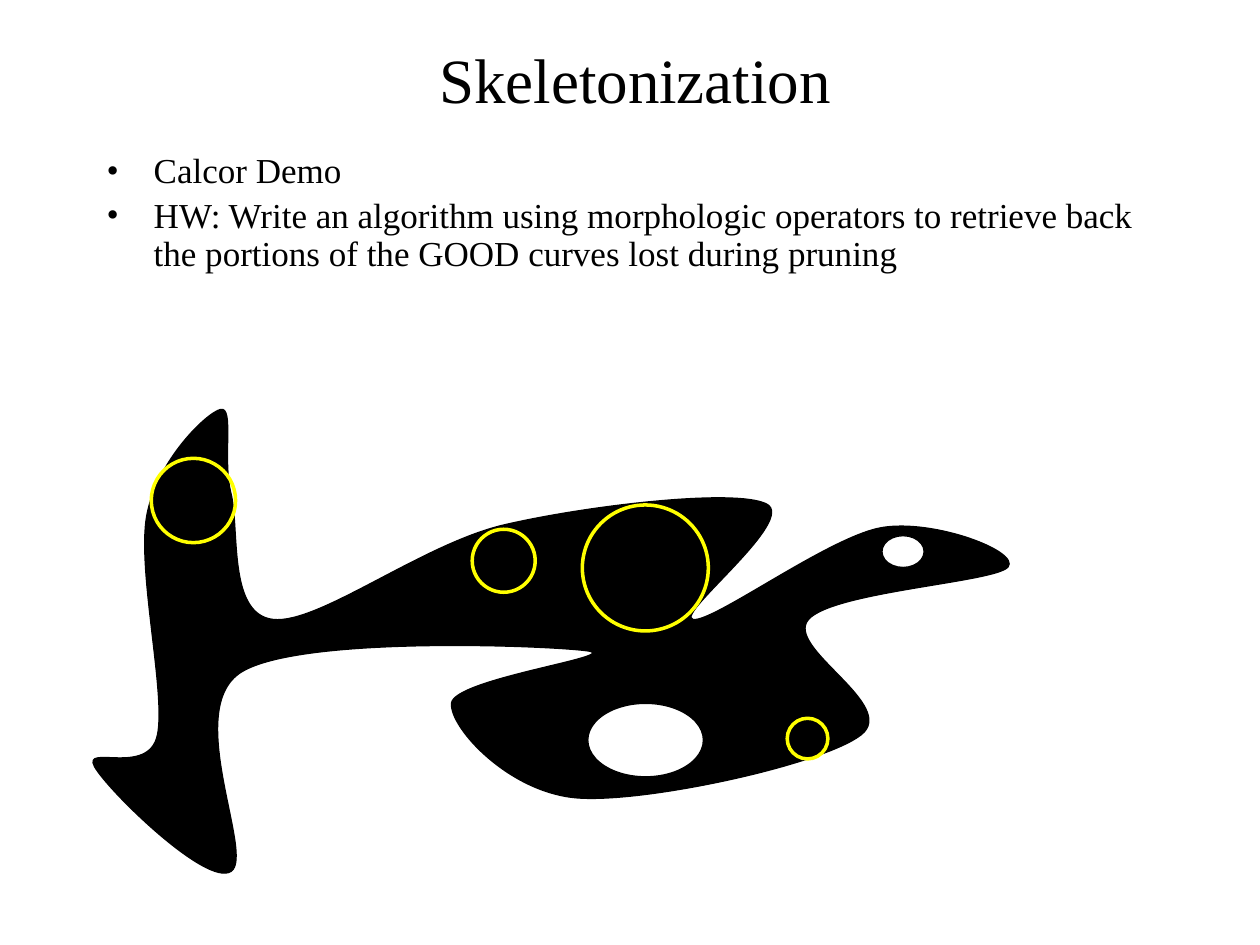
from lxml import etree
from pptx import Presentation
from pptx.dml.color import RGBColor
from pptx.enum.shapes import MSO_SHAPE as Shape
from pptx.enum.text import MSO_ANCHOR as Anchor, MSO_AUTO_SIZE as AutoSize, PP_ALIGN as Align
from pptx.oxml.ns import qn
from pptx.util import Cm, Pt

COLORS = {"ink": "000000", "paper": "FFFFFF", "disk": "FFFF00"}
GRID = 2.54 / 12
BIRD = [(22, 47), (26, 59), (48, 50), (73, 48), (66, 59), (84, 50.25),
        (96, 54), (77, 59), (82, 70), (55, 76), (43, 67), (56, 62),
        (23, 64), (22, 83), (9, 73), (15, 70), (14, 49), (21, 39)]
HOLES = [(11.85, 14.18, 2.33, 1.48), (17.78, 10.8, 0.85, 0.64)]
DISKS = [(9.52, 10.67, 1.27), (11.74, 10.18, 2.54), (3.05, 9.24, 1.7), (15.87, 14.48, 0.82)]
BULLETS = ["Calcor Demo",
           "HW: Write an algorithm using morphologic operators to retrieve back "
           "the portions of the GOOD curves lost during pruning"]


def rgb(name):
    return RGBColor.from_string(COLORS[name])


def add_text(p, text, size=20, color="ink", font="Times New Roman", align=Align.LEFT):
    p.alignment = align
    r = p.add_run()
    r.text = text
    r.font.size = Pt(size)
    r.font.name = font
    r.font.color.rgb = rgb(color)


def spline_points(knots):
    n = len(knots)
    points = []
    for i in range(n):
        a, b, c, d = (knots[(i + k) % n] for k in (-1, 0, 1, 2))
        points.append(tuple(q + (r - p) / 6 for p, q, r in zip(a, b, c)))
        points.append(tuple(r - (s - q) / 6 for q, r, s in zip(b, c, d)))
        points.append(c)
    return points


class SlideBuilder:
    def __init__(self, prs):
        self.slide = prs.slides.add_slide(prs.slide_layouts[5])
        self.shapes = self.slide.shapes

    def style(self, sp, fill, line, width):
        sp.shadow.inherit = False
        if fill:
            sp.fill.solid()
            sp.fill.fore_color.rgb = rgb(fill)
        else:
            sp.fill.background()
        sp.line.color.rgb = rgb(line)
        sp.line.width = Pt(width)

    def title(self, text, x, y, w, h):
        sp = self.shapes.title
        sp.left, sp.top, sp.width, sp.height = Cm(x), Cm(y), Cm(w), Cm(h)
        tf = sp.text_frame
        tf.auto_size = AutoSize.NONE
        tf.vertical_anchor = Anchor.MIDDLE
        add_text(tf.paragraphs[0], text, size=36, align=Align.CENTER)

    def bullets(self, items, x, y, w, h):
        tf = self.shapes.add_textbox(Cm(x), Cm(y), Cm(w), Cm(h)).text_frame
        tf.word_wrap = True
        for i, item in enumerate(items):
            p = tf.add_paragraph() if i else tf.paragraphs[0]
            add_text(p, item)
            p.line_spacing = 0.9
            p.space_before = Pt(4)
            pPr = p._p.get_or_add_pPr()
            pPr.set("marL", str(Cm(0.95)))
            pPr.set("indent", str(-Cm(0.95)))
            etree.SubElement(pPr, qn("a:buFont")).set("typeface", "Times New Roman")
            etree.SubElement(pPr, qn("a:buChar")).set("char", "•")

    def ellipse(self, x, y, w, h, fill=None, line="ink", width=0.75):
        sp = self.shapes.add_shape(Shape.OVAL, Cm(x), Cm(y), Cm(w), Cm(h))
        self.style(sp, fill, line, width)

    def closed_curve(self, knots, fill="ink", line="ink", width=0.75):
        knots = [(Cm(x * GRID), Cm(y * GRID)) for x, y in knots]
        builder = self.shapes.build_freeform(*knots[0], scale=1.0)
        builder.add_line_segments(spline_points(knots), close=True)
        sp = builder.convert_to_shape()
        lines = list(sp._element.iter(qn("a:lnTo")))
        for i in range(0, len(lines), 3):
            curve = etree.Element(qn("a:cubicBezTo"))
            lines[i].addprevious(curve)
            for line_to in lines[i:i + 3]:
                curve.append(line_to[0])
                line_to.getparent().remove(line_to)
        self.style(sp, fill, line, width)


def main():
    prs = Presentation()
    prs.slide_width, prs.slide_height = Cm(25.4), Cm(19.05)
    s = SlideBuilder(prs)
    s.title("Skeletonization", 1.63, 0.48, 22.35, 2.18)
    s.bullets(BULLETS, 1.9, 2.97, 21.39, 14.63)
    s.closed_curve(BIRD)
    for hole in HOLES:
        s.ellipse(*hole, fill="paper")
    for x, y, d in DISKS:
        s.ellipse(x, y, d, d, line="disk", width=2)
    prs.save("out.pptx")


if __name__ == "__main__":
    main()
